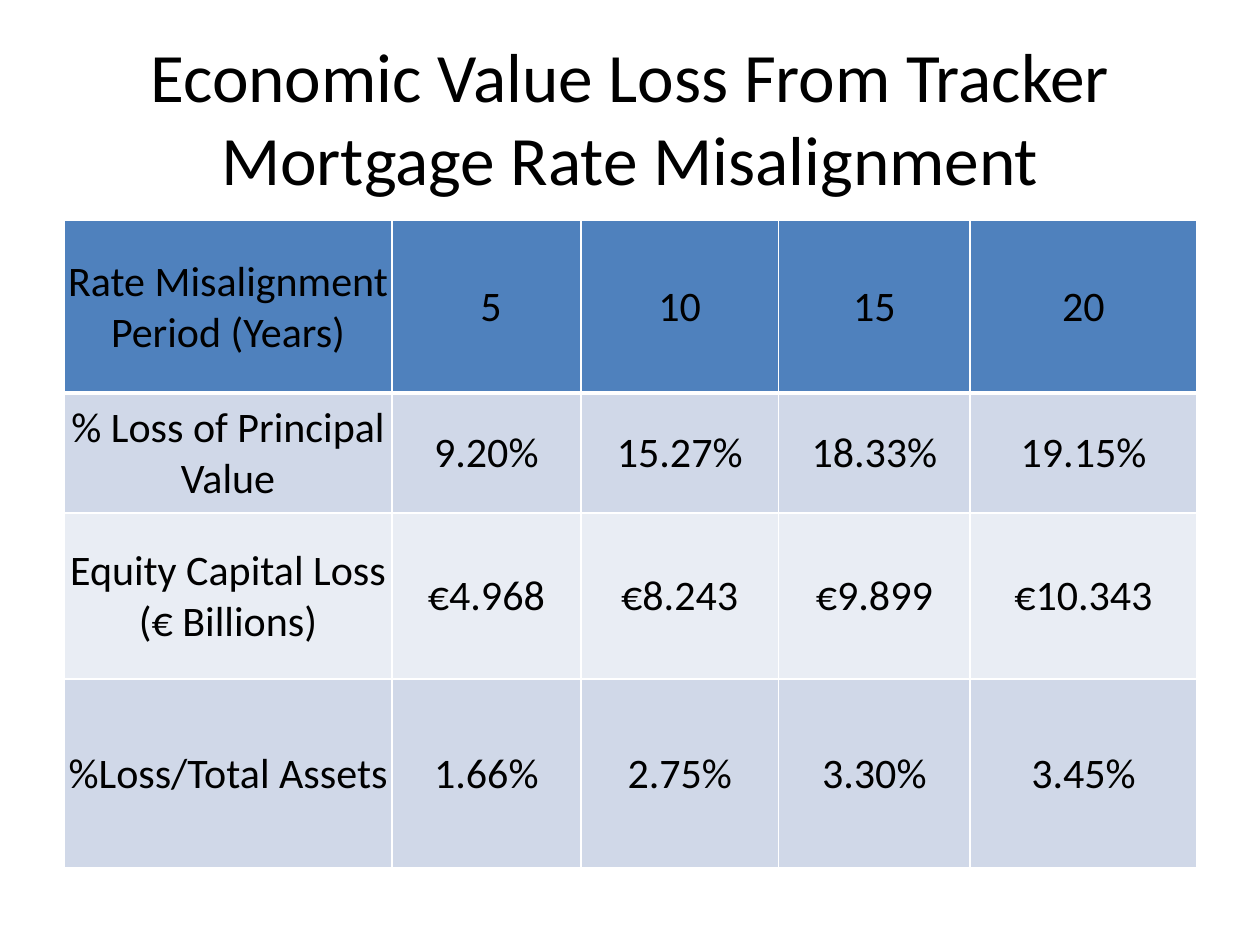
from pptx import Presentation
from pptx.util import Inches, Pt
from pptx.dml.color import RGBColor as RGB
from pptx.enum.text import PP_ALIGN as Align, MSO_ANCHOR as Anchor, MSO_AUTO_SIZE as Fit
from pptx.oxml import parse_xml
from pptx.oxml.ns import nsdecls

theme = {
    "font": "Calibri",
    "text": "000000",
    "line": "FFFFFF",
    "head": "4F81BD",
    "bands": ["D0D8E8", "E9EDF4"],
    "title": 39.6,
    "body": 24,
    "thin": 1,
    "thick": 3,
}


def write(frame, text, size):
    frame.text = text
    par = frame.paragraphs[0]
    par.alignment = Align.CENTER
    font = par.runs[0].font
    for key, value in {"name": theme["font"], "size": Pt(size), "bold": False}.items():
        setattr(font, key, value)
    font.color.rgb = RGB.from_string(theme["text"])


def edge(cell, side, width):
    cell._tc.get_or_add_tcPr().append(parse_xml(
        f'<a:ln{side} {nsdecls("a")} w="{Pt(width)}"><a:solidFill>'
        f'<a:srgbClr val="{theme["line"]}"/></a:solidFill></a:ln{side}>'))


deck = Presentation()
deck.slide_width, deck.slide_height = Inches(10), Inches(7.5)
slide = deck.slides.add_slide(deck.slide_layouts[5])

title = slide.shapes.title
for key, value in {"left": 0.5, "top": 0.3, "width": 9, "height": 1.25}.items():
    setattr(title, key, Inches(value))
write(title.text_frame, "Economic Value Loss From Tracker Mortgage Rate Misalignment", theme["title"])
for key, value in {"word_wrap": True, "auto_size": Fit.NONE, "vertical_anchor": Anchor.MIDDLE}.items():
    setattr(title.text_frame, key, value)

rows = [
    ["Rate Misalignment Period (Years)", " 5", "10", "15", "20"],
    ["% Loss of Principal Value", "9.20%", "15.27%", "18.33%", "19.15%"],
    ["Equity Capital Loss (€ Billions)", "€4.968", "€8.243", "€9.899", "€10.343"],
    ["%Loss/Total Assets", "1.66%", "2.75%", "3.30%", "3.45%"],
]
widths = [2.6, 1.5, 1.57, 1.52, 1.8]
heights = [1.37, 0.95, 1.32, 1.5]
table = slide.shapes.add_table(
    len(rows), len(widths), Inches(0.51), Inches(1.75),
    Inches(sum(widths)), Inches(sum(heights))).table
for col, width in zip(table.columns, widths):
    col.width = Inches(width)
for row, height in zip(table.rows, heights):
    row.height = Inches(height)

layout = {
    "margin_left": Inches(0.01),
    "margin_right": Inches(0.01),
    "margin_top": Inches(0.01),
    "margin_bottom": 0,
    "vertical_anchor": Anchor.MIDDLE,
}
for r, texts in enumerate(rows):
    shade = theme["bands"][(r - 1) % 2] if r else theme["head"]
    top = theme["thick"] if r == 1 else theme["thin"]
    base = theme["thick"] if r == 0 else theme["thin"]
    for c, text in enumerate(texts):
        cell = table.cell(r, c)
        write(cell.text_frame, text, theme["body"])
        for key, value in layout.items():
            setattr(cell, key, value)
        for side, width in {"L": theme["thin"], "R": theme["thin"], "T": top, "B": base}.items():
            edge(cell, side, width)
        cell.fill.solid()
        cell.fill.fore_color.rgb = RGB.from_string(shade)

deck.save("out.pptx")
